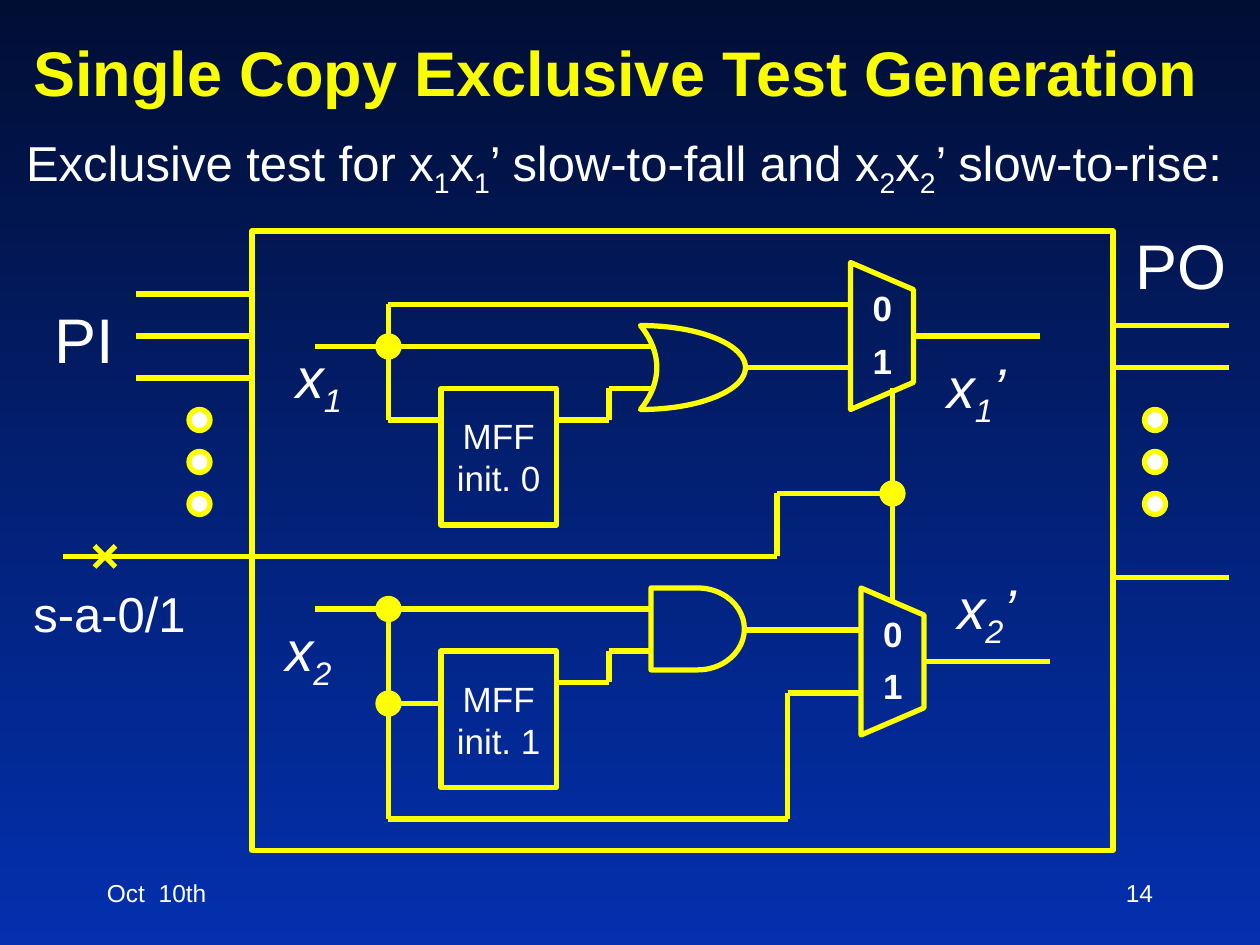
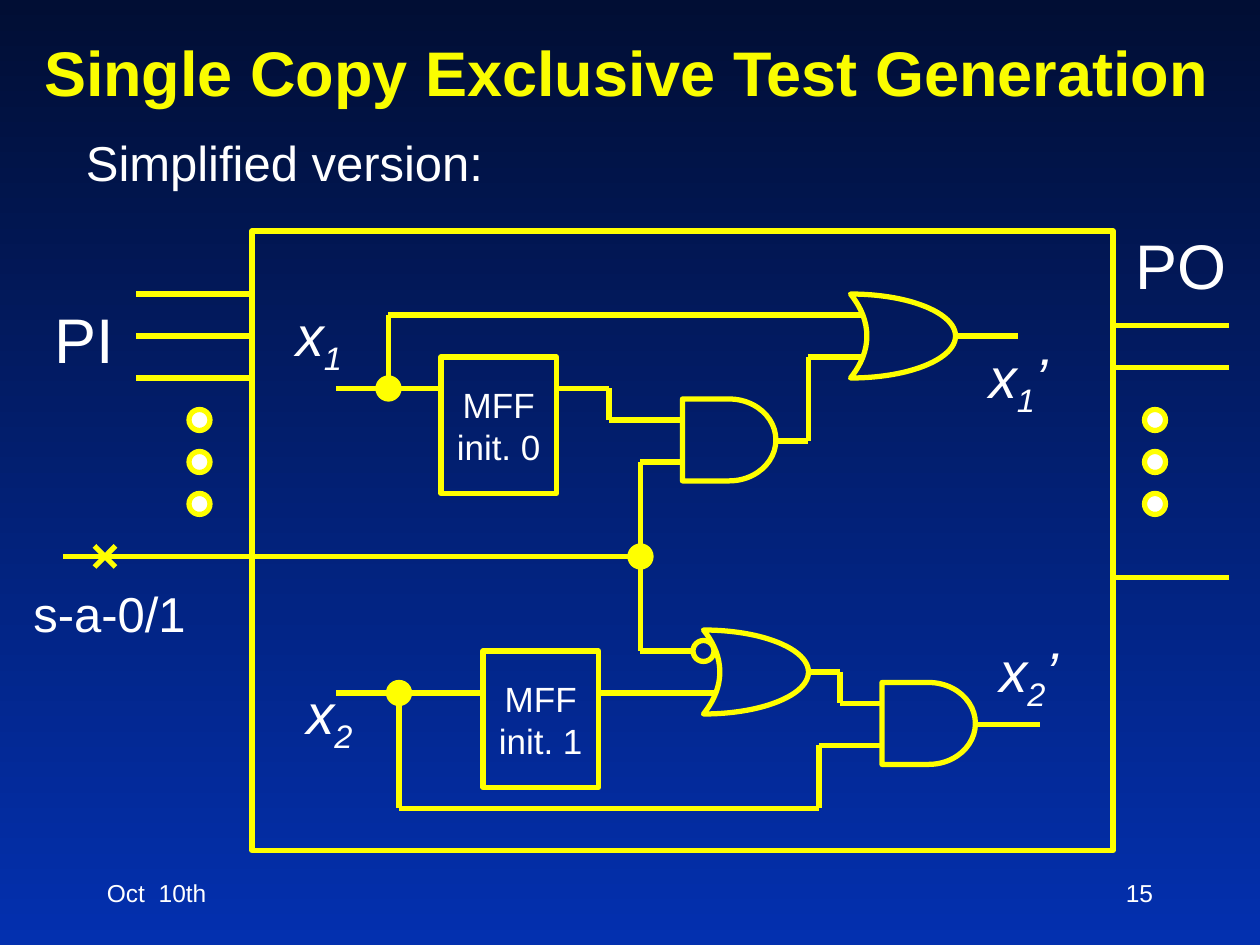
from itertools import pairwise

from lxml.etree import SubElement
from pptx import Presentation
from pptx.dml.color import RGBColor
from pptx.enum.shapes import MSO_CONNECTOR as Connector, MSO_SHAPE as Shape
from pptx.enum.text import MSO_ANCHOR as Anchor, MSO_AUTO_SIZE as AutoSize, PP_ALIGN as Align
from pptx.oxml.ns import qn
from pptx.util import Inches, Pt

COLORS = {
    "sky": "010E34",
    "ground": "0330AF",
    "title": "FAFD00",
    "wire": "FFFF00",
    "text": "FFFFFF",
}
FONT = "Arial"
COLUMNS, ROWS = 120, 90
TITLE_ONLY = 5
TITLE = "Single Copy Exclusive Test Generation"


def color(name):
    return RGBColor.from_string(COLORS[name])


class CircuitDeck:
    """Draws on the current slide; every place is given in grid columns and rows."""

    def __init__(self):
        self.deck = Presentation()
        self.deck.slide_width, self.deck.slide_height = Inches(10), Inches(7.5)
        self.page = None
        fill = self.deck.slide_master.background.fill
        fill.gradient()
        fill.gradient_angle = 270
        for stop, name, position in zip(fill.gradient_stops, ("sky", "ground"), (0, 1)):
            stop.color.rgb = color(name)
            stop.position = position

    def place(self, column, row, width, height):
        column_size = self.deck.slide_width / COLUMNS
        row_size = self.deck.slide_height / ROWS
        return [round(column * column_size), round(row * row_size),
                round(width * column_size), round(height * row_size)]

    def add_spans(self, para, text, size, ink="text", bold=False, italic=False):
        """Add runs split at each bar; every second run is a subscript."""
        for index, piece in enumerate(text.split("|")):
            span = para.add_run()
            span.text = piece
            font = span.font
            font.name, font.size = FONT, Pt(size)
            font.bold, font.italic = bold, italic
            font.color.rgb = color(ink)
            if index % 2:
                span._r.get_or_add_rPr().set("baseline", "-25000")

    def new_page(self, title_place):
        self.page = self.deck.slides.add_slide(self.deck.slide_layouts[TITLE_ONLY])
        title = self.page.shapes.title
        title.left, title.top, title.width, title.height = self.place(*title_place)
        frame = title.text_frame
        frame.auto_size = AutoSize.NONE
        frame.vertical_anchor = Anchor.BOTTOM
        frame.paragraphs[0].alignment = Align.LEFT
        self.add_spans(frame.paragraphs[0], TITLE, 36, "title", bold=True)

    def label(self, text, place, size, italic=False, wrap=True,
              align=Align.LEFT, anchor=Anchor.TOP):
        box = self.page.shapes.add_textbox(*self.place(*place))
        frame = box.text_frame
        frame.word_wrap = wrap
        frame.vertical_anchor = anchor
        frame.paragraphs[0].alignment = align
        self.add_spans(frame.paragraphs[0], text, size, italic=italic)

    def signal(self, text, column, row):
        self.label(text, (column, row, 9, 7.7), 32, italic=True)

    def footer(self, date, number):
        for text, column, align in ((date, 9, Align.LEFT), (number, 86, Align.RIGHT)):
            self.label(text, (column, 82, 25, 6), 14, align=align, anchor=Anchor.MIDDLE)

    def outline(self, kind, place, fill=None):
        shape = self.page.shapes.add_shape(kind, *self.place(*place))
        shape.shadow.inherit = False
        if fill:
            shape.fill.solid()
            shape.fill.fore_color.rgb = color(fill)
        else:
            shape.fill.background()
        shape.line.color.rgb = color("wire")
        shape.line.width = Pt(3)
        return shape

    def wire(self, *points):
        """Join the points, in order, with straight connectors."""
        for start, end in pairwise(points):
            line = self.page.shapes.add_connector(
                Connector.STRAIGHT, *self.place(*start, *end))
            line.line.color.rgb = color("wire")
            line.line.width = Pt(3)
            SubElement(line._element.spPr, qn("a:effectLst"))

    def dot(self, column, row, fill="wire"):
        self.outline(Shape.FLOWCHART_CONNECTOR, (column - 1, row - 1, 2, 2), fill)

    def bubble(self, column, row):
        self.outline(Shape.OVAL, (column - 1, row - 1, 2, 2))

    def and_gate(self, column, row):
        self.outline(Shape.FLOWCHART_DELAY, (column, row, 8.9, 7.8))

    def or_gate(self, column, row):
        gate = self.outline(Shape.MOON, (column, row, 10, 8))
        gate.adjustments[0] = 0.844
        gate.rotation = 180

    def flip_flop(self, initial, column, row):
        box = self.outline(Shape.RECTANGLE, (column, row, 11, 13))
        frame = box.text_frame
        frame.word_wrap = True
        frame.vertical_anchor = Anchor.MIDDLE
        frame.paragraphs[0].alignment = Align.CENTER
        self.add_spans(frame.paragraphs[0], f"MFF init. {initial}", 20)

    def multiplexer(self, column, row):
        """Turn a trapezoid on its side and keep its input numbers upright."""
        box = self.outline(Shape.TRAPEZOID, (column, row, 14, 6))
        box.adjustments[0] = 0.43
        box.rotation = 90
        frame = box.text_frame
        frame.word_wrap = True
        frame.vertical_anchor = Anchor.TOP
        frame._txBody.bodyPr.set("vert", "vert270")
        lower = frame.add_paragraph()
        lower.space_before = Pt(6)
        for para, text in zip(frame.paragraphs, (" 0", " 1")):
            para.alignment = Align.LEFT
            self.add_spans(para, text, 20, bold=True)

    def circuit_frame(self):
        """Draw the block with its inputs, outputs and the faulty line's mark."""
        self.outline(Shape.RECTANGLE, (24, 22, 82, 59))
        self.label("PI", (4, 28, 9, 8.5), 36)
        self.label("PO", (107, 21, 13, 8.5), 36)
        self.label("s-a-0/1", (2, 55, 17.2, 6.8), 28, wrap=False)
        for row in (28, 32, 36):
            self.wire((13, row), (24, row))
        for row in (31, 35, 55):
            self.wire((106, row), (117, row))
        for column in (19, 110):
            for row in (40, 44, 48):
                self.dot(column, row, "text")
        self.wire((9, 52), (11, 54))
        self.wire((11, 52), (9, 54))

    def save(self):
        self.deck.save("out.pptx")


def draw_multiplexer_version(art):
    art.new_page((2, 3, 116, 8))
    art.label("Exclusive test for x|1|x|1|’ slow-to-fall and x|2|x|2|’ slow-to-rise:",
              (1.3, 12, 118.7, 6.8), 28, wrap=False)
    art.circuit_frame()

    art.signal("x|1", 27, 32)
    art.signal("x|1|’", 89, 33)
    art.flip_flop(0, 42, 37)
    art.or_gate(61, 31)
    art.multiplexer(77, 29)
    art.wire((30, 33), (62, 33))
    art.wire((81, 29), (37, 29), (37, 40), (42, 40))
    art.wire((53, 40), (58, 40), (58, 37), (62, 37))
    art.wire((71, 35), (81, 35))
    art.wire((87, 32), (99, 32))

    art.signal("x|2", 26, 58)
    art.signal("x|2|’", 90, 54)
    art.flip_flop(1, 42, 62)
    art.and_gate(62, 56)
    art.multiplexer(78, 60)
    art.wire((30, 58), (62, 58))
    art.wire((37, 58), (37, 78), (75, 78), (75, 66), (82, 66))
    art.wire((37, 67), (42, 67))
    art.wire((53, 65), (58, 65), (58, 62), (62, 62))
    art.wire((71, 60), (82, 60))
    art.wire((88, 63), (100, 63))

    art.wire((6, 53), (74, 53), (74, 47), (85, 47))
    art.wire((85, 37), (85, 57.2))
    for point in ((37, 33), (37, 58), (37, 67), (85, 47)):
        art.dot(*point)
    art.footer("Oct  10th", "14")


def draw_simplified_version(art):
    art.new_page((3, 3, 114, 8))
    art.label("Simplified version:", (7, 12, 40.7, 6.8), 28, wrap=False)
    art.circuit_frame()

    art.signal("x|1", 27, 28)
    art.signal("x|1|’", 93, 32)
    art.flip_flop(0, 42, 34)
    art.and_gate(65, 38)
    art.or_gate(81, 28)
    art.wire((32, 37), (42, 37))
    art.wire((37, 37), (37, 30), (82, 30))
    art.wire((53, 37), (58, 37), (58, 40), (65, 40))
    art.wire((74, 42), (77, 42), (77, 34), (82, 34))
    art.wire((91, 32), (97, 32))

    art.signal("x|2", 28, 64)
    art.signal("x|2|’", 94, 60)
    art.flip_flop(1, 46, 62)
    art.or_gate(67, 60)
    art.bubble(67, 62)
    art.and_gate(84, 65)
    art.wire((32, 66), (46, 66))
    art.wire((38, 66), (38, 77), (78, 77), (78, 71), (84, 71))
    art.wire((57, 66), (68, 66))
    art.wire((77, 64), (80, 64), (80, 67), (84, 67))
    art.wire((93, 69), (99, 69))

    art.wire((6, 53), (61, 53))
    art.wire((65, 44), (61, 44), (61, 62), (66, 62))
    for point in ((37, 37), (38, 66), (61, 53)):
        art.dot(*point)
    art.footer("Oct  10th", "15")


def main():
    art = CircuitDeck()
    draw_multiplexer_version(art)
    draw_simplified_version(art)
    art.save()


if __name__ == "__main__":
    main()
